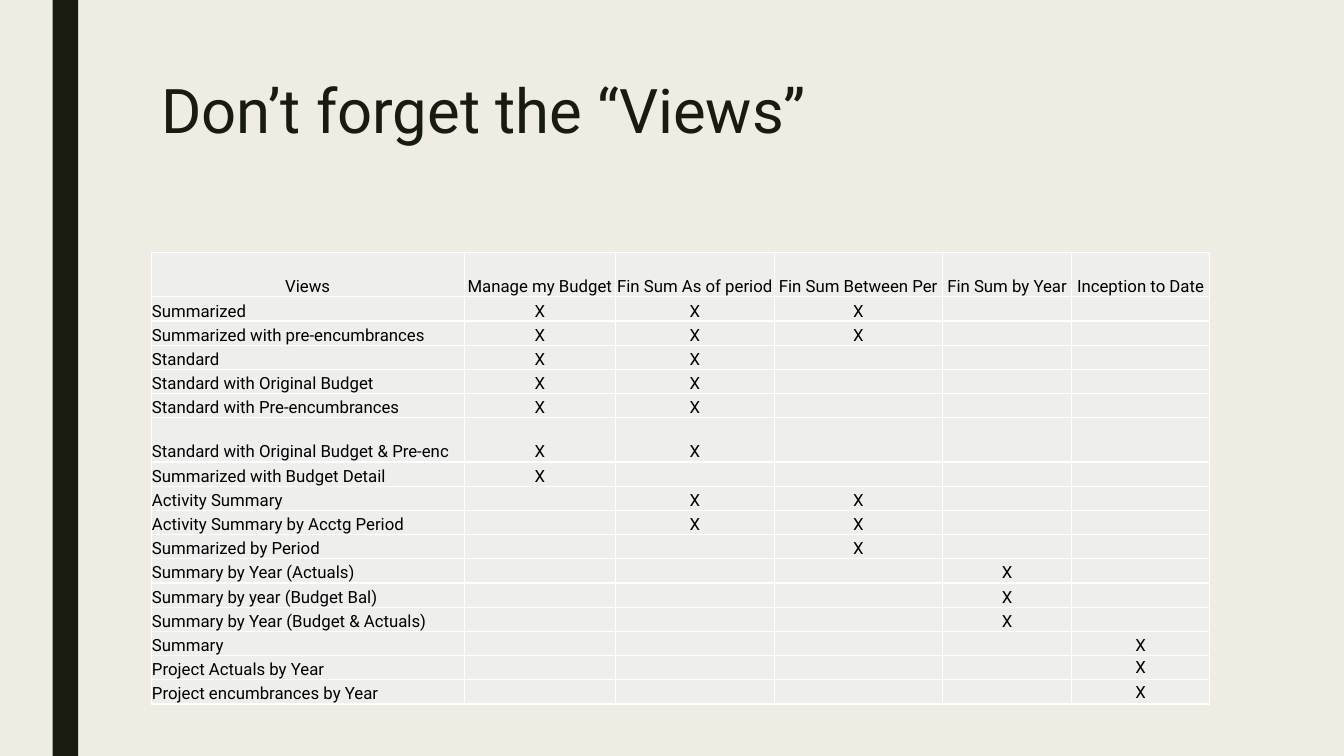
from lxml import etree
from pptx import Presentation
from pptx import util as u
from pptx.dml.color import RGBColor
from pptx.enum import shapes, text
from pptx.oxml.ns import qn

FONT = "Roboto"
DARK, PAPER, CELL, WHITE, BLACK = "191B0E", "EFEDE3", "EEEEED", "FFFFFF", "000000"
TALL, LOW = 1.11, 0.61
WIDTHS = [7.89, 3.81, 4.0, 4.24, 3.26, 3.47]
HEADS = ["Views", "Manage my Budget", "Fin Sum As of period",
         "Fin Sum Between Per", "Fin Sum by Year", "Inception to Date"]
# Each view with the numbers of the columns that offer it
VIEWS = [
    ("Summarized", (1, 2, 3)),
    ("Summarized with pre-encumbrances", (1, 2, 3)),
    ("Standard", (1, 2)),
    ("Standard with Original Budget", (1, 2)),
    ("Standard with Pre-encumbrances", (1, 2)),
    ("Standard with Original Budget & Pre-enc", (1, 2)),
    ("Summarized with Budget Detail", (1,)),
    ("Activity Summary", (2, 3)),
    ("Activity Summary by Acctg Period", (2, 3)),
    ("Summarized by Period", (3,)),
    ("Summary by Year (Actuals)", (4,)),
    ("Summary by year (Budget Bal)", (4,)),
    ("Summary by Year (Budget & Actuals)", (4,)),
    ("Summary", (5,)),
    ("Project Actuals by Year", (5,)),
    ("Project encumbrances by Year", (5,)),
]
TALL_ROWS = (0, 6)
MID_ROWS = (15, 16)


def paint(fill, color):
    fill.solid()
    fill.fore_color.rgb = RGBColor.from_string(color)


def style(par, size, color):
    for run in par.runs:
        run.font.name = FONT
        run.font.size = u.Pt(size)
        run.font.color.rgb = RGBColor.from_string(color)


def add_bar(slide):
    bar = slide.shapes.add_shape(shapes.MSO_SHAPE.RECTANGLE,
                                 u.Cm(1.33), 0, u.Cm(0.64), u.Cm(19.05))
    bar.shadow.inherit = False
    paint(bar.fill, DARK)
    bar.line.fill.background()


def set_title(slide, words):
    title = slide.shapes.title
    title.left, title.top = u.Cm(3.81), u.Cm(1.91)
    title.width, title.height = u.Cm(26.67), u.Cm(4.11)
    frame = title.text_frame
    frame.text = words
    frame.word_wrap = True
    frame.vertical_anchor = text.MSO_ANCHOR.TOP
    par = frame.paragraphs[0]
    par.alignment = text.PP_ALIGN.LEFT
    par.line_spacing = 0.89
    style(par, 44, DARK)


def add_edges(cell):
    """Give the cell a thin white border on all four sides."""
    props = cell._tc.get_or_add_tcPr()
    for side in ("a:lnL", "a:lnR", "a:lnT", "a:lnB"):
        line = etree.SubElement(props, qn(side), w=str(u.Pt(1)))
        fill = etree.SubElement(line, qn("a:solidFill"))
        etree.SubElement(fill, qn("a:srgbClr"), val=WHITE)


def fill_cell(cell, words, align, anchor):
    add_edges(cell)
    paint(cell.fill, CELL)
    cell.margin_left = cell.margin_right = cell.margin_top = u.Cm(0.02)
    cell.margin_bottom = 0
    cell.vertical_anchor = anchor
    par = cell.text_frame.paragraphs[0]
    par.alignment = align
    if words:
        par.text = words
        style(par, 12, BLACK)
    else:
        # Keeps an empty cell from stretching its row
        etree.SubElement(par._p, qn("a:endParaRPr"), sz="1200")


def add_grid(slide):
    rows = [HEADS] + [
        [name] + ["X" if col in marks else "" for col in range(1, len(HEADS))]
        for name, marks in VIEWS]
    highs = [TALL if row in TALL_ROWS else LOW for row in range(len(rows))]
    grid = slide.shapes.add_table(
        len(rows), len(HEADS), u.Cm(3.81), u.Cm(6.37),
        u.Cm(sum(WIDTHS)), u.Cm(sum(highs))).table
    grid.first_row = grid.horz_banding = False
    for col, width in zip(grid.columns, WIDTHS):
        col.width = u.Cm(width)
    for r, (row, high) in enumerate(zip(rows, highs)):
        grid.rows[r].height = u.Cm(high)
        for c, words in enumerate(row):
            align = text.PP_ALIGN.LEFT if r and not c else text.PP_ALIGN.CENTER
            mid = r in MID_ROWS and c == 5
            anchor = text.MSO_ANCHOR.MIDDLE if mid else text.MSO_ANCHOR.BOTTOM
            fill_cell(grid.cell(r, c), words, align, anchor)


def main():
    deck = Presentation()
    deck.slide_width, deck.slide_height = u.Cm(33.87), u.Cm(19.05)
    slide = deck.slides.add_slide(deck.slide_layouts[5])
    paint(slide.background.fill, PAPER)
    add_bar(slide)
    set_title(slide, "Don’t forget the “Views”")
    add_grid(slide)
    deck.save("out.pptx")


if __name__ == "__main__":
    main()
